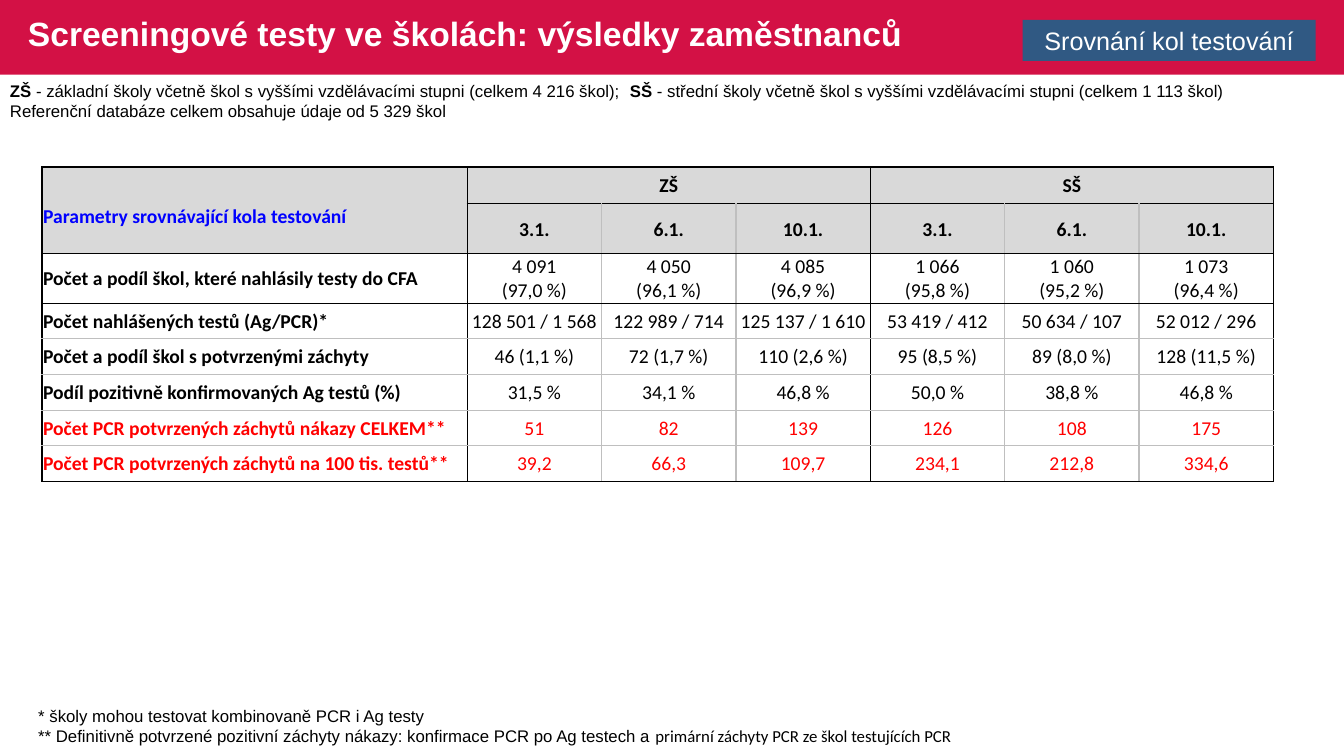
"""Build the slide comparing school screening rounds for employees."""
from copy import deepcopy

from lxml.etree import SubElement
from pptx import Presentation
from pptx.dml.color import RGBColor as Rgb
from pptx.enum.shapes import MSO_SHAPE as Preset
from pptx.enum.text import MSO_ANCHOR as Anchor, MSO_AUTO_SIZE as AutoSize, PP_ALIGN as Align
from pptx.oxml.ns import qn
from pptx.util import Pt

PX = 9525
COLORS = {
    "band": "D31145", "badge": "305983", "header": "D9D9D9", "white": "FFFFFF",
    "black": "000000", "grid": "BFBFBF", "blue": "0000FF", "red": "FF0000",
}
TITLE = "Screeningové testy ve školách: výsledky zaměstnanců"
BADGE = "Srovnání kol testování"
LEGEND = [
    [("ZŠ", {"bold": True}),
     (" - základní školy včetně škol s vyššími vzdělávacími stupni (celkem 4 216 škol);  ", {}),
     ("SŠ ", {"bold": True}),
     ("- střední školy včetně škol s vyššími vzdělávacími stupni (celkem 1 113 škol)", {})],
    [("Referenční databáze celkem obsahuje údaje od 5 329 škol", {})],
]
FOOTNOTES = [
    [("* školy mohou testovat kombinovaně PCR i Ag testy", {})],
    [("** Definitivně potvrzené pozitivní záchyty nákazy: konfirmace PCR po Ag testech a ", {}),
     ("primární záchyty PCR ze škol testujících PCR", {"name": "Calibri"})],
]
ROUNDS = ["3.1.", "6.1.", "10.1."]
ROWS = [
    ["Parametry srovnávající kola testování", "ZŠ", "", "", "SŠ", "", ""],
    ["", *ROUNDS, *ROUNDS],
    ["Počet a podíl škol, které nahlásily testy do CFA",
     "4 091\v(97,0 %)", "4 050\v(96,1 %)", "4 085\v(96,9 %)",
     "1 066\v(95,8 %)", "1 060\v(95,2 %)", "1 073\v(96,4 %)"],
    ["Počet nahlášených testů (Ag/PCR)*", "128 501 / 1 568", "122 989 / 714",
     "125 137 / 1 610", "53 419 / 412", "50 634 / 107", "52 012 / 296"],
    ["Počet a podíl škol s potvrzenými záchyty", "46 (1,1 %)", "72 (1,7 %)",
     "110 (2,6 %)", "95 (8,5 %)", "89 (8,0 %)", "128 (11,5 %)"],
    ["Podíl pozitivně konfirmovaných Ag testů (%)",
     "31,5 %", "34,1 %", "46,8 %", "50,0 %", "38,8 %", "46,8 %"],
    ["Počet PCR potvrzených záchytů nákazy CELKEM**", "51", "82", "139", "126", "108", "175"],
    ["Počet PCR potvrzených záchytů na 100 tis. testů**",
     "39,2", "66,3", "109,7", "234,1", "212,8", "334,6"],
]
COLUMN_WIDTHS = [405] + [128] * 6
ROW_HEIGHTS = [35, 47, 47] + [34] * 5
HEADER_ROWS = 2
FIRST_RED_ROW = 6
BLACK_COLUMN_EDGES = {0, 1, 4, 7}
BLACK_ROW_EDGES = {0: 1, 1: 0.5, 2: 1, 3: 0.5, 8: 1}
NO_STYLE = "{2D5ABB26-0587-4C30-8999-92F81FD0307C}"


def scaled(*lengths):
    """Turn px lengths into EMU."""
    return [length * PX for length in lengths]


def apply(target, values):
    """Set every attribute named in a dict of format values."""
    for attribute, value in values.items():
        setattr(target, attribute, value)


def style_font(font, size, color="black", name="Arial", bold=False):
    """Format one font."""
    apply(font, {"size": Pt(size), "name": name, "bold": bold})
    font.color.rgb = Rgb.from_string(COLORS[color])


def add_bar(slide, box, color):
    """Add a plain filled rectangle."""
    bar = slide.shapes.add_shape(Preset.RECTANGLE, *scaled(*box))
    bar.shadow.inherit = False
    bar.fill.solid()
    bar.fill.fore_color.rgb = Rgb.from_string(COLORS[color])
    bar.line.fill.background()
    return bar


def add_badge(slide, box):
    """Add the label at the right end of the title band."""
    badge = add_bar(slide, box, "badge")
    apply(badge.text_frame, {"word_wrap": True, "vertical_anchor": Anchor.TOP})
    line = badge.text_frame.paragraphs[0]
    apply(line, {"text": BADGE, "alignment": Align.CENTER})
    style_font(line.runs[0].font, 18, "white")


def place_title(slide, box):
    """Move and format the title placeholder."""
    title = slide.shapes.title
    apply(title, dict(zip(("left", "top", "width", "height"), scaled(*box))))
    apply(title.text_frame, {"word_wrap": True, "vertical_anchor": Anchor.MIDDLE})
    line = title.text_frame.paragraphs[0]
    apply(line, {"text": TITLE, "alignment": Align.LEFT, "line_spacing": 0.9})
    style_font(line.runs[0].font, 24, "white", bold=True)


def add_note(slide, box, lines):
    """Add a text box with one paragraph per line of formatted parts."""
    frame = slide.shapes.add_textbox(*scaled(*box)).text_frame
    apply(frame, {"word_wrap": True, "auto_size": AutoSize.SHAPE_TO_FIT_TEXT})
    for index, parts in enumerate(lines):
        line = frame.add_paragraph() if index else frame.paragraphs[0]
        for text, look in parts:
            run = line.add_run()
            run.text = text
            style_font(run.font, 12, **look)


def row_edge(index):
    """Give colour and width of a horizontal grid line."""
    return ("black" if index in BLACK_ROW_EDGES else "grid"), BLACK_ROW_EDGES.get(index, 1)


def column_edge(index):
    """Give colour and width of a vertical grid line."""
    return ("black" if index in BLACK_COLUMN_EDGES else "grid"), 1


def draw_borders(cell, row, column):
    """Draw the four borders of a cell, spans included."""
    edges = {
        "a:lnL": column_edge(column),
        "a:lnR": column_edge(column + cell.span_width),
        "a:lnT": row_edge(row),
        "a:lnB": row_edge(row + cell.span_height),
    }
    properties = cell._tc.get_or_add_tcPr()
    for tag, (color, width) in edges.items():
        border = SubElement(properties, qn(tag), w=str(int(Pt(width))))
        fill = SubElement(border, qn("a:solidFill"))
        SubElement(fill, qn("a:srgbClr"), val=COLORS[color])


def fill_cell(cell, row, column, text):
    """Write and format one cell of the comparison."""
    is_header, is_corner = row < HEADER_ROWS, row == column == 0
    side, bottom = scaled(1, 24 if is_corner else 0)
    apply(cell, {
        "margin_left": side, "margin_right": side, "margin_top": side, "margin_bottom": bottom,
        "vertical_anchor": Anchor.BOTTOM if is_corner else Anchor.MIDDLE,
    })
    draw_borders(cell, row, column)
    if is_header:
        cell.fill.solid()
        cell.fill.fore_color.rgb = Rgb.from_string(COLORS["header"])
    else:
        cell.fill.background()
    color = "blue" if is_corner else "red" if row >= FIRST_RED_ROW else "black"
    line = cell.text_frame.paragraphs[0]
    apply(line, {"text": text, "alignment": Align.CENTER if column else Align.LEFT})
    for run in line.runs:
        style_font(run.font, 14, color, "Calibri", is_header or column == 0)
    for line_break in line._p.findall(qn("a:br")):
        line_break.append(deepcopy(line.runs[0]._r.rPr))


def add_comparison(slide, left, top):
    """Add the table of testing rounds."""
    box = scaled(left, top, sum(COLUMN_WIDTHS), sum(ROW_HEIGHTS))
    table = slide.shapes.add_table(len(ROWS), len(COLUMN_WIDTHS), *box).table
    apply(table, {"first_row": False, "horz_banding": False})
    table._tbl.tblPr.find(qn("a:tableStyleId")).text = NO_STYLE
    for column, width in zip(table.columns, scaled(*COLUMN_WIDTHS)):
        column.width = width
    for row, height in zip(table.rows, scaled(*ROW_HEIGHTS)):
        row.height = height
    table.cell(0, 0).merge(table.cell(1, 0))
    for first in (1, 4):
        table.cell(0, first).merge(table.cell(0, first + len(ROUNDS) - 1))
    for row, texts in enumerate(ROWS):
        for column, text in enumerate(texts):
            cell = table.cell(row, column)
            if not cell.is_spanned:
                fill_cell(cell, row, column, text)


def main():
    """Assemble and save the slide."""
    deck = Presentation()
    apply(deck, dict(zip(("slide_width", "slide_height"), scaled(1280, 720))))
    slide = deck.slides.add_slide(deck.slide_layouts[5])
    band = add_bar(slide, (0, 0, 1280, 71), "band")
    slide.shapes._spTree.insert(2, band._element)
    place_title(slide, (17, 4, 1256, 60))
    add_comparison(slide, 40, 159)
    add_note(slide, (27, 667, 1060, 48), FOOTNOTES)
    add_note(slide, (0, 72, 1237, 48), LEGEND)
    add_badge(slide, (974, 19, 279, 39))
    deck.save("out.pptx")


if __name__ == "__main__":
    main()
